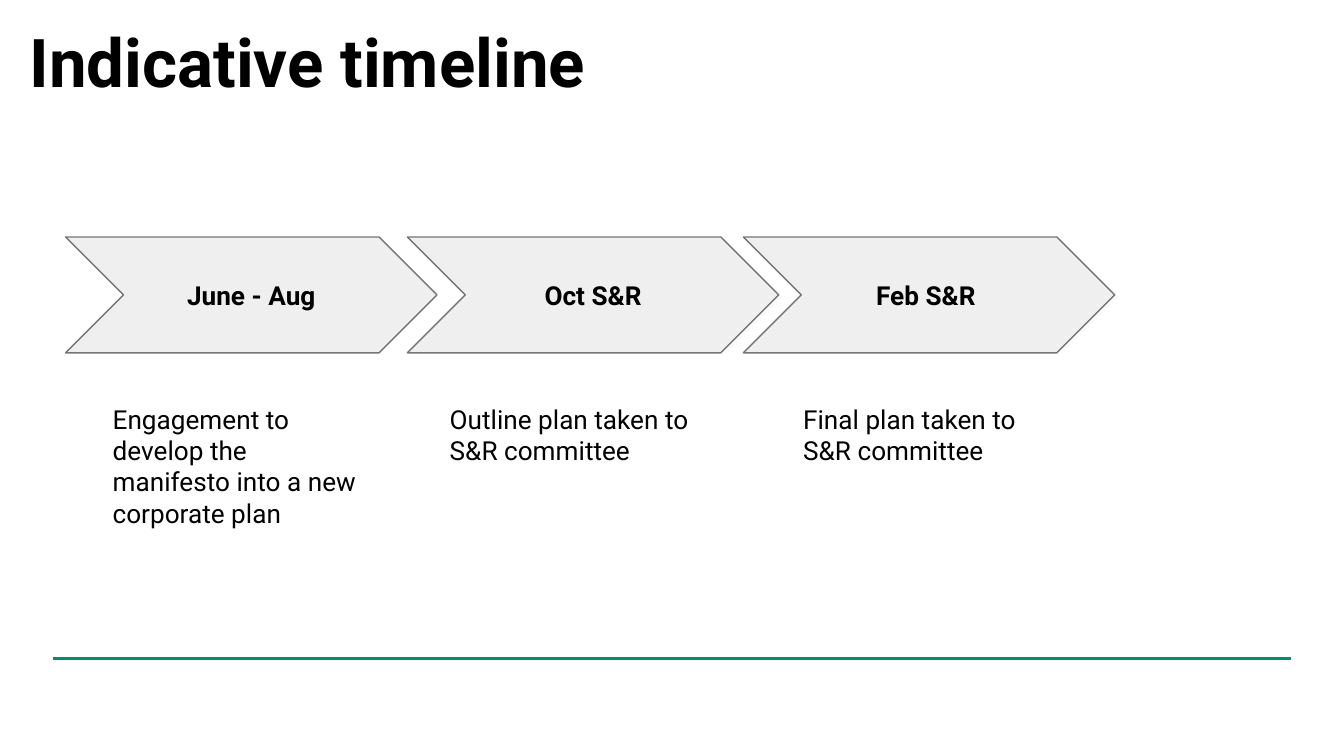
"""Build the indicative timeline slide with three chevron stages."""
import pptx
import pptx.dml.color
import pptx.enum.shapes
import pptx.enum.text
import pptx.oxml.ns
import pptx.util
from lxml import etree

Cm = pptx.util.Cm
Pt = pptx.util.Pt
BLACK = pptx.dml.color.RGBColor(0x00, 0x00, 0x00)
WHITE = pptx.dml.color.RGBColor(0xFF, 0xFF, 0xFF)
GREEN = pptx.dml.color.RGBColor(0x00, 0x8D, 0x71)
LIGHT_GREY = pptx.dml.color.RGBColor(0xEF, 0xEF, 0xEF)
DARK_GREY = pptx.dml.color.RGBColor(0x75, 0x75, 0x75)


def write_text(shape, text, size, bold, inset):
    frame = shape.text_frame
    frame.word_wrap = True
    frame.margin_left = frame.margin_right = Cm(inset)
    frame.margin_top = frame.margin_bottom = Cm(inset)
    run = frame.paragraphs[0].add_run()
    run.text = text
    run.font.name = "Roboto"
    run.font.size = Pt(size)
    run.font.bold = bold
    run.font.color.rgb = BLACK


presentation = pptx.Presentation()
presentation.slide_width = Cm(25.4)
presentation.slide_height = Cm(14.29)
slide = presentation.slides.add_slide(presentation.slide_layouts[6])
slide.background.fill.solid()
slide.background.fill.fore_color.rgb = WHITE

footer_line = slide.shapes.add_connector(
    pptx.enum.shapes.MSO_CONNECTOR.STRAIGHT, Cm(1), Cm(12.44), Cm(24.4), Cm(12.44)
)
footer_line.line.color.rgb = GREEN
footer_line.line.width = Pt(1.5)
etree.SubElement(footer_line._element.spPr, pptx.oxml.ns.qn("a:effectLst"))

title = slide.shapes.add_textbox(Cm(0.56), Cm(0.38), Cm(22.45), Cm(1.09))
write_text(title, "Indicative timeline", 36, True, 0)

stages = [
    ("June - Aug", 1.24, "Engagement to develop the manifesto into a new corporate plan", 1.88),
    ("Oct S&R", 7.7, "Outline plan taken to S&R committee", 8.25),
    ("Feb S&R ", 14.05, "Final plan taken to S&R committee", 14.93),
]
for period, chevron_left, description, description_left in stages:
    chevron = slide.shapes.add_shape(
        pptx.enum.shapes.MSO_SHAPE.CHEVRON, Cm(chevron_left), Cm(4.48), Cm(7.02), Cm(2.19)
    )
    chevron.shadow.inherit = False
    chevron.fill.solid()
    chevron.fill.fore_color.rgb = LIGHT_GREY
    chevron.line.color.rgb = DARK_GREY
    chevron.line.width = Pt(0.75)
    write_text(chevron, period, 14, True, 0.25)
    chevron.text_frame.vertical_anchor = pptx.enum.text.MSO_ANCHOR.MIDDLE
    chevron.text_frame.paragraphs[0].alignment = pptx.enum.text.PP_ALIGN.CENTER

    description_box = slide.shapes.add_textbox(
        Cm(description_left), Cm(7.37), Cm(5.23), Cm(2.59)
    )
    write_text(description_box, description, 14, False, 0.25)

presentation.save("out.pptx")
